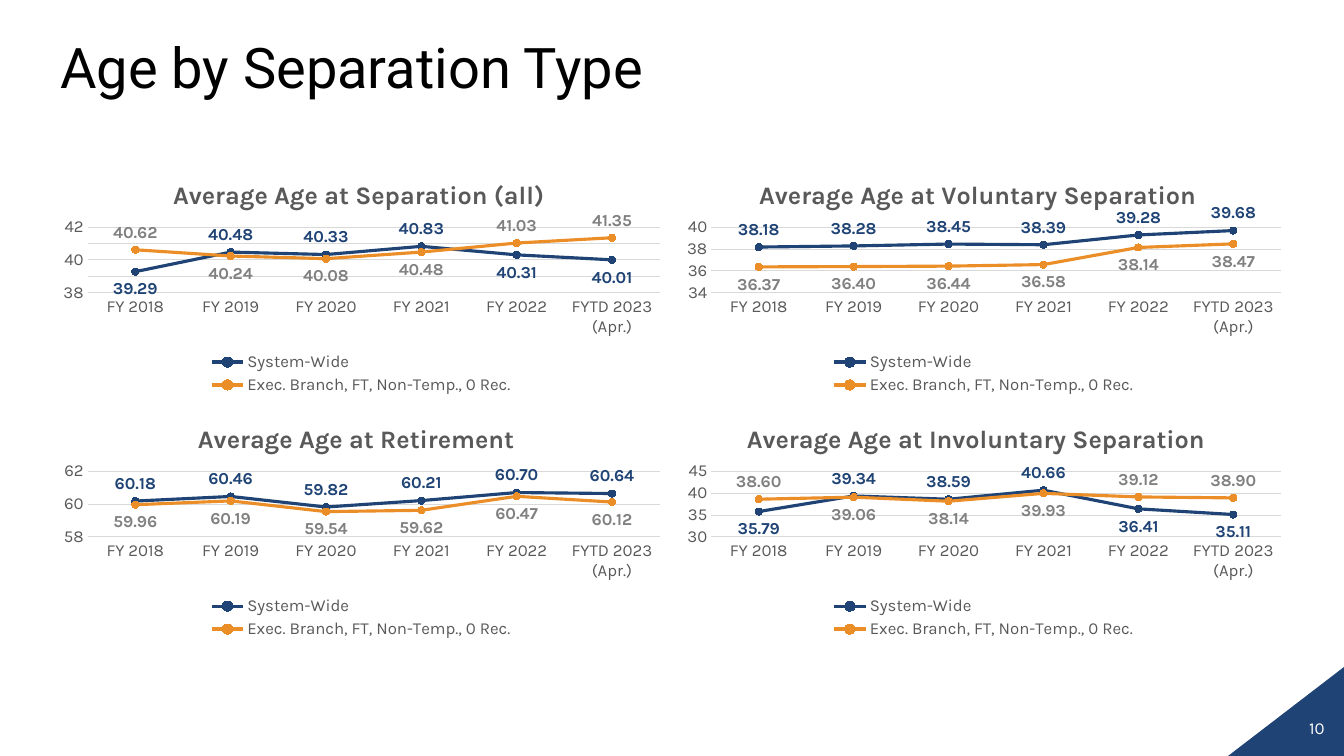
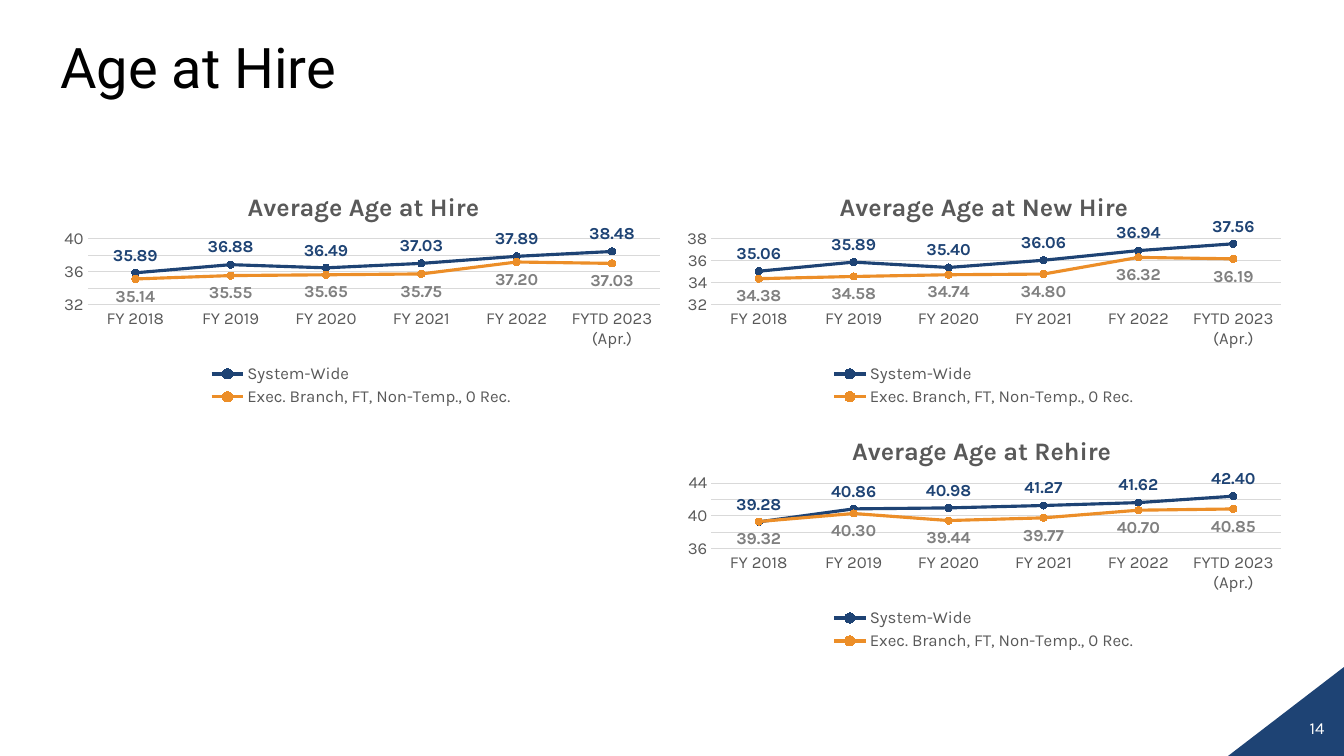
from lxml.etree import SubElement
from pptx import Presentation
from pptx.chart.data import CategoryChartData
from pptx.dml.color import RGBColor
from pptx.enum.chart import (XL_CHART_TYPE, XL_LABEL_POSITION, XL_LEGEND_POSITION,
                             XL_MARKER_STYLE, XL_TICK_MARK)
from pptx.enum.shapes import MSO_SHAPE
from pptx.enum.text import MSO_ANCHOR, PP_ALIGN
from pptx.oxml.ns import qn
from pptx.util import Cm, Pt

NAVY = RGBColor(0x1E, 0x43, 0x74)
ORANGE = RGBColor(0xEC, 0x8E, 0x28)
GRAY = RGBColor(0x80, 0x80, 0x80)
DARK = RGBColor(0x59, 0x59, 0x59)
PALE = RGBColor(0xD9, 0xD9, 0xD9)
BLACK = RGBColor(0, 0, 0)
WHITE = RGBColor(255, 255, 255)

YEARS = ["FY 2018", "FY 2019", "FY 2020", "FY 2021", "FY 2022", "FYTD 2023 (Apr.)"]
ABOVE, BELOW = XL_LABEL_POSITION.ABOVE, XL_LABEL_POSITION.BELOW
GROUPS = [("System-Wide", NAVY, NAVY, ABOVE, BELOW),
          ("Exec. Branch, FT, Non-Temp., 0 Rec.", ORANGE, GRAY, BELOW, ABOVE)]
LEFTS = [Cm(1.27), Cm(16.99)]
WIDTHS = [Cm(15.67), Cm(15.6)]
HEIGHT = Cm(6.15)

PAGES = [
    ("Age by Separation Type", "10", Cm(3.94), [
        ("Average Age at Separation (all)", 0.19, 0, 0, (38, 42, 1), (0, 4, 5),
         [39.29, 40.48, 40.33, 40.83, 40.31, 40.01],
         [40.62, 40.24, 40.08, 40.48, 41.03, 41.35]),
        ("Average Age at Retirement", 0.23, 0, 1, (58, 62, 2), (),
         [60.18, 60.46, 59.82, 60.21, 60.7, 60.64],
         [59.96, 60.19, 59.54, 59.62, 60.47, 60.12]),
        ("Average Age at Voluntary Separation", 0.13, 1, 0, (34, 40, 2), (),
         [38.18, 38.28, 38.45, 38.39, 39.28, 39.68],
         [36.37, 36.4, 36.44, 36.58, 38.14, 38.47]),
        ("Average Age at Involuntary Separation", 0.11, 1, 1, (30, 45, 5), (0, 4, 5),
         [35.79, 39.34, 38.59, 40.66, 36.41, 35.11],
         [38.6, 39.06, 38.14, 39.93, 39.12, 38.9]),
    ]),
    ("Age at Hire", "14", Cm(4.24), [
        ("Average Age at Hire", 0.31, 0, 0, (32, 40, 2), (),
         [35.89, 36.88, 36.49, 37.03, 37.89, 38.48],
         [35.14, 35.55, 35.65, 35.75, 37.2, 37.03]),
        ("Average Age at New Hire", 0.26, 1, 0, (32, 38, 2), (),
         [35.06, 35.89, 35.4, 36.06, 36.94, 37.56],
         [34.38, 34.58, 34.74, 34.8, 36.32, 36.19]),
        ("Average Age at Rehire", 0.28, 1, 1, (36, 44, 2), (),
         [39.28, 40.86, 40.98, 41.27, 41.62, 42.4],
         [39.32, 40.3, 39.44, 39.77, 40.7, 40.85]),
    ]),
]


def style(font, size, color, bold=False, name="Karla"):
    font.size = Pt(size)
    font.color.rgb = color
    font.bold = bold
    font.name = name


def place(node, spot, inner=False, **sides):
    for old in node.findall(qn("c:layout")):
        node.remove(old)
    layout = SubElement(node, qn("c:layout"))
    node.insert(spot, layout)
    manual = SubElement(layout, qn("c:manualLayout"))
    if inner:
        SubElement(manual, qn("c:layoutTarget")).set("val", "inner")
    for tag in ("xMode", "yMode"):
        SubElement(manual, qn("c:" + tag)).set("val", "edge")
    for side, value in sides.items():
        SubElement(manual, qn("c:" + side)).set("val", str(value))


deck = Presentation()
deck.slide_width, deck.slide_height = Cm(33.87), Cm(19.05)

for head, number, top, charts in PAGES:
    slide = deck.slides.add_slide(deck.slide_layouts[5])

    corner = slide.shapes.add_shape(MSO_SHAPE.RIGHT_TRIANGLE, Cm(30.95), Cm(16.81),
                                    Cm(2.92), Cm(2.24))
    corner.shadow.inherit = False
    corner.fill.solid()
    corner.fill.fore_color.rgb = NAVY
    corner.line.fill.background()
    corner.element.spPr.find(qn("a:xfrm")).set("flipH", "1")

    title = slide.shapes.title
    title.left, title.top, title.width, title.height = Cm(1.27), Cm(0.03), Cm(31.32), Cm(3.48)
    title.text_frame.text = head
    title.text_frame.vertical_anchor = MSO_ANCHOR.MIDDLE
    para = title.text_frame.paragraphs[0]
    para.alignment = PP_ALIGN.LEFT
    para.line_spacing = 0.9
    style(para.runs[0].font, 40, BLACK, name="Roboto")

    box = slide.shapes.add_textbox(Cm(30.71), Cm(17.96), Cm(2.92), Cm(1.09))
    box.text_frame.word_wrap = True
    box.text_frame.text = number
    para = box.text_frame.paragraphs[0]
    para.alignment = PP_ALIGN.RIGHT
    style(para.runs[0].font, 12, WHITE)

    for name, start, col, row, scale, swaps, *rows in charts:
        data = CategoryChartData(number_format="0.00")
        data.categories = YEARS
        for group, values in zip(GROUPS, rows):
            data.add_series(group[0], values)
        chart = slide.shapes.add_chart(XL_CHART_TYPE.LINE_MARKERS, LEFTS[col],
                                       top + row * HEIGHT, WIDTHS[col], HEIGHT, data).chart
        style(chart.font, 10, BLACK)

        chart.has_title = True
        chart.chart_title.text_frame.text = name
        style(chart.chart_title.text_frame.paragraphs[0].runs[0].font, 18, DARK, True)
        place(chart.chart_title._element, 1, x=start, y=0.07)

        chart.has_legend = True
        legend = chart.legend
        legend.position = XL_LEGEND_POSITION.BOTTOM
        legend.include_in_layout = False
        style(legend.font, 12, DARK)
        place(legend._element, 1, x=0.25, y=0.79, w=0.5, h=0.2)

        plot = chart.plots[0]
        plot.vary_by_categories = False
        place(plot._element.getparent(), 0, True, x=0.06, y=0.29, w=0.92, h=0.27)

        years, ages = chart.category_axis, chart.value_axis
        for axis in (years, ages):
            axis.major_tick_mark = axis.minor_tick_mark = XL_TICK_MARK.NONE
            style(axis.tick_labels.font, 12, DARK)
        ages.minimum_scale, ages.maximum_scale, ages.major_unit = scale
        ages.tick_labels.number_format = "0"
        ages.tick_labels.number_format_is_linked = False
        ages.format.line.fill.background()
        ages.has_major_gridlines = True
        for rule in (years.format.line, ages.major_gridlines.format.line):
            rule.color.rgb = PALE
            rule.width = Pt(0.75)

        for series, (_, color, ink, side, other) in zip(plot.series, GROUPS):
            series.smooth = False
            series.format.line.color.rgb = color
            series.format.line.width = Pt(2.25)
            mark = series.marker
            mark.style = XL_MARKER_STYLE.CIRCLE
            mark.size = 5
            mark.format.fill.solid()
            mark.format.fill.fore_color.rgb = color
            mark.format.line.color.rgb = color
            labels = series.data_labels
            labels.show_value = True
            labels.number_format = "0.00"
            labels.number_format_is_linked = False
            labels.position = side
            style(labels.font, 12, ink, True)
            for index in swaps:
                label = series.points[index].data_label
                style(label.font, 12, ink, True)
                label.position = other

deck.save("out.pptx")
